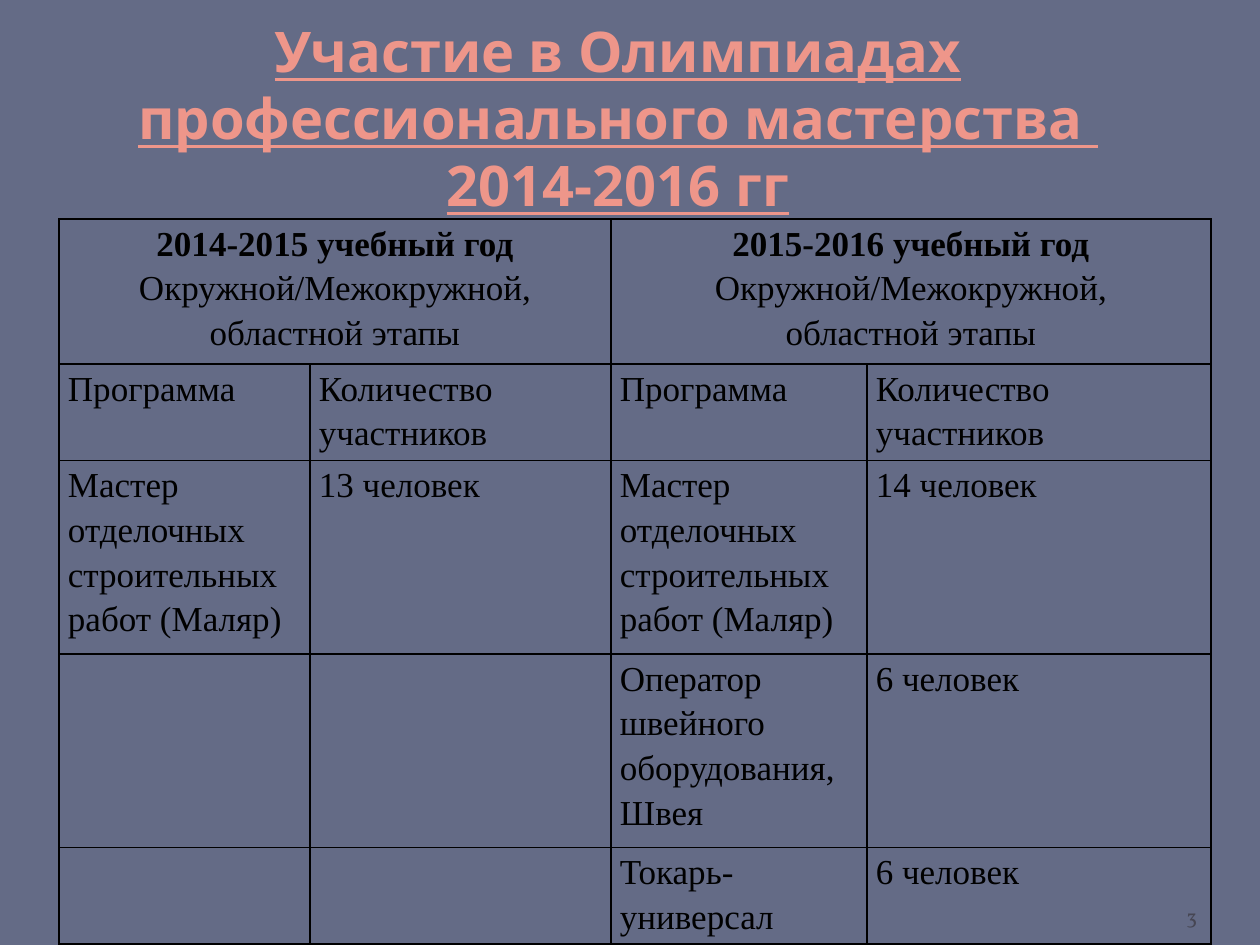
from lxml import etree
from pptx import Presentation
from pptx import util as u
from pptx.dml.color import RGBColor
from pptx.enum import text as t
from pptx.oxml import ns

PX = 914400 // 126
HEADS = [
    "2014-2015 учебный год\nОкружной/Межокружной, областной этапы",
    "2015-2016 учебный год\nОкружной/Межокружной,\nобластной этапы",
]
PAINT = "Мастер отделочных строительных работ (Маляр)"
ROWS = [
    [HEADS[0], "", HEADS[1], ""],
    ["Программа", "Количество участников"] * 2,
    [PAINT, "13 человек", PAINT, "14 человек"],
    ["", "", "Оператор швейного оборудования, Швея", "6 человек"],
    ["", "", "Токарь-универсал", "6 человек"],
]
LINES = [3, 2, 4, 4, 2]


def px(n):
    return u.Emu(n * PX)


def color(code):
    return RGBColor.from_string(code)


class Deck:
    """Holds the style and the current slide, and draws each kind of element."""

    ink = "000000"
    face = "Times New Roman"
    step = 40

    def __init__(self, wide, high, back):
        self.prs = Presentation()
        self.prs.slide_width, self.prs.slide_height = px(wide), px(high)
        self.slide = self.prs.slides.add_slide(self.prs.slide_layouts[6])
        fill = self.slide.background.fill
        fill.solid()
        fill.fore_color.rgb = color(back)

    def style(self, par, size, face, ink, bold=False, line=False):
        for run in par.runs:
            font = run.font
            font.size, font.name = u.Pt(size), face
            font.bold, font.underline = bold, line
            font.color.rgb = color(ink)

    def label(self, box, words, align, anchor, pad, *look):
        frame = self.slide.shapes.add_textbox(*map(px, box)).text_frame
        frame.word_wrap = True
        frame.vertical_anchor = anchor
        frame.margin_left = frame.margin_right = px(pad)
        frame.text = words
        par = frame.paragraphs[0]
        par.alignment = align
        self.style(par, *look)

    def border(self, cell):
        props = cell._tc.get_or_add_tcPr()
        for i, side in enumerate(("lnL", "lnR", "lnT", "lnB")):
            line = etree.Element(ns.qn("a:" + side), w=str(u.Pt(1)))
            fill = etree.SubElement(line, ns.qn("a:solidFill"))
            etree.SubElement(fill, ns.qn("a:srgbClr"), val=self.ink)
            props.insert(i, line)

    def cell(self, cell, words, head):
        cell.fill.background()
        cell.margin_left = cell.margin_right = px(9)
        cell.margin_top = cell.margin_bottom = 0
        self.border(cell)
        cell.text_frame.text = words
        for i, par in enumerate(cell.text_frame.paragraphs):
            par.alignment = t.PP_ALIGN.CENTER if head else t.PP_ALIGN.JUSTIFY
            par.line_spacing = 1.15
            self.style(par, 20, self.face, self.ink, head and i == 0)

    def table(self, left, top, cols, lines, rows):
        box = map(px, (left, top, sum(cols), sum(lines) * self.step))
        grid = self.slide.shapes.add_table(len(rows), len(cols), *box).table
        grid.first_row = grid.horz_banding = False
        for col, wide in zip(grid.columns, cols):
            col.width = px(wide)
        for r, (row, count) in enumerate(zip(rows, lines)):
            grid.rows[r].height = px(count * self.step)
            for c, words in enumerate(row):
                self.cell(grid.cell(r, c), words, r == 0)
        for c in range(0, len(cols), 2):
            grid.cell(0, c).merge(grid.cell(0, c + 1))


def main():
    deck = Deck(1260, 945, "646B86")
    deck.label(
        (39, 38, 1158, 158),
        "Участие в Олимпиадах профессионального мастерства \v2014-2016 гг",
        t.PP_ALIGN.CENTER, t.MSO_ANCHOR.MIDDLE, 13,
        32, "Noto Sans", "EE968A", True, True,
    )
    deck.label(
        (1092, 885, 105, 50), "3",
        t.PP_ALIGN.RIGHT, t.MSO_ANCHOR.BOTTOM, 0,
        12, "Vollkorn", "464653",
    )
    deck.table(59, 219, [251, 301, 256, 344], LINES, ROWS)
    deck.prs.save("out.pptx")


if __name__ == "__main__":
    main()
